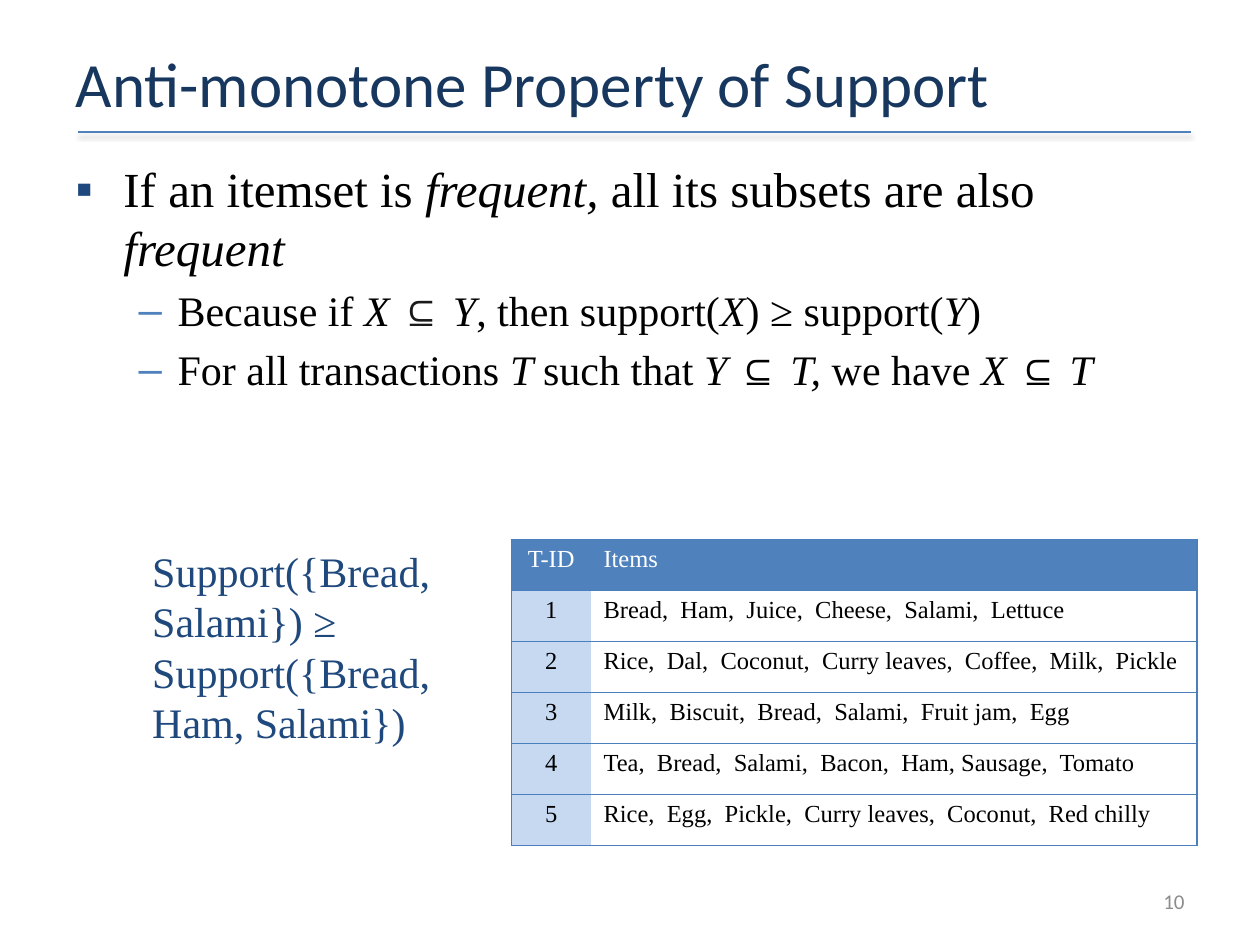
from dataclasses import dataclass

from lxml.etree import SubElement
from pptx import Presentation
from pptx.dml.color import RGBColor
from pptx.enum.shapes import MSO_CONNECTOR
from pptx.enum.text import MSO_ANCHOR, MSO_AUTO_SIZE, PP_ALIGN
from pptx.oxml.ns import qn
from pptx.util import Inches, Pt

SERIF, SANS = "Times New Roman", "Calibri"
BLACK, WHITE, NAVY, BLUE = "000000", "FFFFFF", "1F497D", "4F81BD"
PALE_BLUE, BORDER = "C6D9F1", "4B7EBC"


@dataclass
class TextRun:
    text: str
    italic: bool = False
    color: str = BLACK


@dataclass
class Bullet:
    level: int
    size: float
    indent: float
    hanging: float
    symbol: str
    color: str
    runs: list[TextRun]


BULLETS = [
    Bullet(0, 28, 0.38, 0.38, "▪", NAVY, [
        TextRun("If an itemset is "), TextRun("frequent, ", True),
        TextRun("all its subsets are also "), TextRun("frequent", True)]),
    Bullet(1, 24, 0.81, 0.31, "–", BLUE, [
        TextRun("Because if "), TextRun("X ", True), TextRun("⊆", color="1A1A1A"),
        TextRun(" Y", True), TextRun(", then support("), TextRun("X", True),
        TextRun(") ≥ support("), TextRun("Y", True), TextRun(")")]),
    Bullet(1, 24, 0.81, 0.31, "–", BLUE, [
        TextRun("For all transactions "), TextRun("T ", True), TextRun("such that "),
        TextRun("Y ", True), TextRun("⊆"), TextRun(" T, ", True), TextRun("we have "),
        TextRun("X ", True), TextRun("⊆ "), TextRun("T", True)]),
]
TRANSACTIONS = [
    ("T-ID", "Items"),
    ("1", "Bread,  Ham,  Juice,  Cheese,  Salami,  Lettuce"),
    ("2", "Rice,  Dal,  Coconut,  Curry leaves,  Coffee,  Milk,  Pickle"),
    ("3", "Milk,  Biscuit,  Bread,  Salami,  Fruit jam,  Egg"),
    ("4", "Tea,  Bread,  Salami,  Bacon,  Ham, Sausage,  Tomato"),
    ("5", "Rice,  Egg,  Pickle,  Curry leaves,  Coconut,  Red chilly"),
]


def rgb(color: str) -> RGBColor:
    return RGBColor.from_string(color)


def format_font(font, name: str, size: float, color: str, italic: bool = False) -> None:
    font.name, font.size, font.italic = name, Pt(size), italic
    font.color.rgb = rgb(color)


def place(shape, left: float, top: float, width: float, height: float) -> None:
    shape.left, shape.top = Inches(left), Inches(top)
    shape.width, shape.height = Inches(width), Inches(height)


def add_text(slide, box: tuple, text: str, name: str, size: float, color: str):
    """Add a wrapping one-paragraph text box and return its text frame."""
    text_frame = slide.shapes.add_textbox(*map(Inches, box)).text_frame
    text_frame.word_wrap = True
    text_frame.text = text
    format_font(text_frame.paragraphs[0].runs[0].font, name, size, color)
    return text_frame


def add_title_rule(slide) -> None:
    rule = slide.shapes.add_connector(
        MSO_CONNECTOR.STRAIGHT, Inches(0.62), Inches(1.05), Inches(9.45), Inches(1.05))
    rule.line.color.rgb = rgb(BLUE)
    rule.line.width = Pt(1)
    effects = SubElement(rule._element.spPr, qn("a:effectLst"))
    shadow = SubElement(effects, qn("a:outerShdw"), blurRad=str(Pt(3.1)),
                        dist=str(Pt(1.6)), dir="5400000", rotWithShape="0")
    shade = SubElement(shadow, qn("a:srgbClr"), val=BLACK)
    SubElement(shade, qn("a:alpha"), val="38000")


def set_title(slide) -> None:
    title = slide.shapes.title
    place(title, 0.5, 0.3, 9, 0.71)
    text_frame = title.text_frame
    text_frame.text = "Anti-monotone Property of Support"
    text_frame.auto_size = MSO_AUTO_SIZE.NONE
    text_frame.vertical_anchor = MSO_ANCHOR.MIDDLE
    paragraph = text_frame.paragraphs[0]
    paragraph.alignment = PP_ALIGN.LEFT
    format_font(paragraph.runs[0].font, SANS, 36, "17375E")


def fill_bullet(paragraph, bullet: Bullet) -> None:
    paragraph.level = bullet.level
    properties = paragraph._p.get_or_add_pPr()
    properties.set("marL", str(Inches(bullet.indent)))
    properties.set("indent", str(-Inches(bullet.hanging)))
    bullet_color = SubElement(properties, qn("a:buClr"))
    SubElement(bullet_color, qn("a:srgbClr"), val=bullet.color)
    SubElement(properties, qn("a:buFont"), typeface="Arial")
    SubElement(properties, qn("a:buChar"), char=bullet.symbol)
    for text_run in bullet.runs:
        run = paragraph.add_run()
        run.text = text_run.text
        format_font(run.font, SERIF, bullet.size, text_run.color, text_run.italic)


def set_body(slide) -> None:
    body = slide.placeholders[1]
    place(body, 0.5, 1.21, 9, 2.85)
    text_frame = body.text_frame
    text_frame.auto_size = MSO_AUTO_SIZE.NONE
    for index, bullet in enumerate(BULLETS):
        paragraph = text_frame.add_paragraph() if index else text_frame.paragraphs[0]
        fill_bullet(paragraph, bullet)


def set_borders(cell, sides: str) -> None:
    """Draw the sides named by the letters L, R, T and B, hiding the others."""
    properties = cell._tc.get_or_add_tcPr()
    for side in "LRTB":
        line = SubElement(properties, qn(f"a:ln{side}"), w=str(Pt(0.75)))
        if side in sides:
            fill = SubElement(line, qn("a:solidFill"))
            SubElement(fill, qn("a:srgbClr"), val=BORDER)
        else:
            SubElement(line, qn("a:noFill"))


def add_transaction_table(slide) -> None:
    widths = (0.63, 4.81)
    table = slide.shapes.add_table(
        len(TRANSACTIONS), len(widths), Inches(4.06), Inches(4.28),
        Inches(sum(widths)), Inches(2.43)).table
    for column, width in zip(table.columns, widths):
        column.width = Inches(width)
    for row_index, values in enumerate(TRANSACTIONS):
        header = row_index == 0
        for column_index, value in enumerate(values):
            is_id = column_index == 0
            cell = table.cell(row_index, column_index)
            set_borders(cell, "LTB" if is_id else "RTB")
            cell.fill.solid()
            cell.fill.fore_color.rgb = rgb(BLUE if header else PALE_BLUE if is_id else WHITE)
            cell.text_frame.text = value
            paragraph = cell.text_frame.paragraphs[0]
            paragraph.alignment = PP_ALIGN.CENTER if is_id else PP_ALIGN.LEFT
            font = paragraph.runs[0].font
            format_font(font, SERIF, 14, WHITE if header else BLACK)
            font.bold = False


def add_support_example(slide) -> None:
    text_frame = add_text(slide, (0.67, 4.28, 3.16, 2.43),
                          "Support({Bread, Salami}) ≥ Support({Bread, Ham, Salami})",
                          SERIF, 24, NAVY)
    paragraph = text_frame.paragraphs[0]
    paragraph.level = 1
    paragraph.space_before = Pt(4.8)
    properties = paragraph._p.get_or_add_pPr()
    properties.set("marL", str(Inches(0.44)))
    properties.set("indent", "0")


def add_page_number(slide) -> None:
    text_frame = add_text(slide, (7.17, 6.95, 2.33, 0.4), "10", SANS, 12, "8C8C8C")
    text_frame.vertical_anchor = MSO_ANCHOR.MIDDLE
    text_frame.paragraphs[0].alignment = PP_ALIGN.RIGHT


def main() -> None:
    presentation = Presentation()
    presentation.slide_width, presentation.slide_height = Inches(10), Inches(7.5)
    slide = presentation.slides.add_slide(presentation.slide_layouts[1])
    add_title_rule(slide)
    set_title(slide)
    set_body(slide)
    add_page_number(slide)
    add_transaction_table(slide)
    add_support_example(slide)
    presentation.save("out.pptx")


if __name__ == "__main__":
    main()
